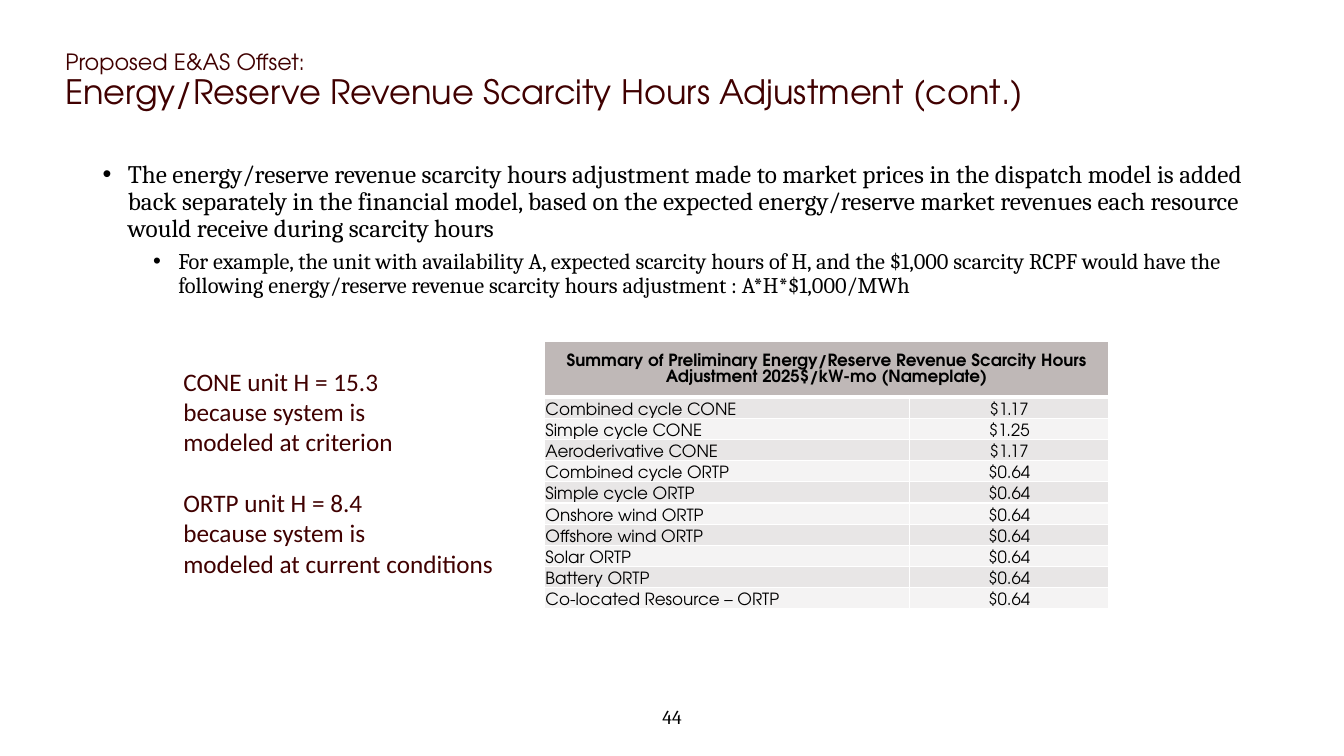
"""Build the slide on the scarcity hours adjustment with its summary table."""
import pptx
import pptx.dml.color
import pptx.enum.text
import pptx.oxml
import pptx.oxml.ns
import pptx.util

ALIGN = pptx.enum.text.PP_ALIGN
ANCHOR = pptx.enum.text.MSO_ANCHOR
MAROON, BLACK, WHITE = "400000", "000000", "FFFFFF"
HEADING_FONT, BODY_FONT, NOTE_FONT = "TeX Gyre Adventor", "Cambria", "Calibri"


def colour(value):
    return pptx.dml.color.RGBColor.from_string(value)


def write(frame, text, font=BODY_FONT, size=18, ink=BLACK, bold=False,
          align=ALIGN.LEFT, spacing=1.0, before=0, bullet_at=None):
    paragraph = frame.paragraphs[0]
    if paragraph.runs:
        paragraph = frame.add_paragraph()
    if bullet_at is not None:
        hang = pptx.util.Inches(0.25)
        properties = paragraph._p.get_or_add_pPr()
        properties.set("marL", str(pptx.util.Inches(bullet_at) + hang))
        properties.set("indent", str(-hang))
        properties.append(pptx.oxml.parse_xml(
            f'<a:buFont {pptx.oxml.ns.nsdecls("a")} typeface="Arial"/>'))
        properties.append(pptx.oxml.parse_xml(
            f'<a:buChar {pptx.oxml.ns.nsdecls("a")} char="•"/>'))
    paragraph.alignment = align
    paragraph.line_spacing = spacing
    paragraph.space_before = pptx.util.Pt(before)
    run = paragraph.add_run()
    run.text = text
    run.font.name = font
    run.font.size = pptx.util.Pt(size)
    run.font.bold = bold
    run.font.color.rgb = colour(ink)


deck = pptx.Presentation()
deck.slide_width = pptx.util.Inches(13.33)
deck.slide_height = pptx.util.Inches(7.5)
column, row = deck.slide_width / 100, deck.slide_height / 100
slide = deck.slides.add_slide(deck.slide_layouts[6])

title = dict(font=HEADING_FONT, ink=MAROON, spacing=0.9)
body = dict(spacing=0.9)
note = dict(font=NOTE_FONT, ink=MAROON)
text_blocks = [
    ((40.06, 92.93, 19.88, 5.73), ANCHOR.TOP, [
        ("44", dict(body, size=14, align=ALIGN.CENTER))]),
    ((4.13, 3.47, 86.27, 14.53), ANCHOR.MIDDLE, [
        ("Proposed E&AS Offset:", dict(title, size=16)),
        ("Energy/Reserve Revenue Scarcity Hours Adjustment (cont.)", dict(title, size=24))]),
    ((6.9, 20.67, 86.27, 27.07), ANCHOR.TOP, [
        ("The energy/reserve revenue scarcity hours adjustment made to market prices in the "
         "dispatch model is added back separately in the financial model, based on the expected "
         "energy/reserve market revenues each resource would receive during scarcity hours",
         dict(body, bullet_at=0)),
        ("For example, the unit with availability A, expected scarcity hours of H, and the $1,000 "
         "scarcity RCPF would have the following energy/reserve revenue scarcity hours "
         "adjustment : A*H*$1,000/MWh",
         dict(body, size=16, before=5, bullet_at=0.5))]),
    ((12.9, 47.73, 25.58, 29.6), ANCHOR.TOP, [
        ("CONE unit H = 15.3", note),
        ("because system is", note),
        ("modeled at criterion", note),
        ("ORTP unit H = 8.4", dict(note, before=22)),
        ("because system is", note),
        ("modeled at current conditions", note)]),
]
for (left, top, width, height), anchor, paragraphs in text_blocks:
    frame = slide.shapes.add_textbox(
        int(left * column), int(top * row), int(width * column), int(height * row)).text_frame
    frame.word_wrap = True
    frame.vertical_anchor = anchor
    for text, style in paragraphs:
        write(frame, text, **style)

adjustments = [
    ("Summary of Preliminary Energy/Reserve Revenue Scarcity Hours "
     "Adjustment 2025$/kW-mo (Nameplate)", ""),
    ("Combined cycle CONE", "$1.17"),
    ("Simple cycle CONE", "$1.25"),
    ("Aeroderivative CONE", "$1.17"),
    ("Combined cycle ORTP", "$0.64"),
    ("Simple cycle ORTP", "$0.64"),
    ("Onshore wind ORTP", "$0.64"),
    ("Offshore wind ORTP", "$0.64"),
    ("Solar ORTP", "$0.64"),
    ("Battery ORTP", "$0.64"),
    ("Co-located Resource – ORTP", "$0.64"),
]
summary = slide.shapes.add_table(
    len(adjustments), 2, int(40.51 * column), int(45.2 * row),
    int(42 * column), int(34.8 * row)).table
for summary_column, share in zip(summary.columns, (27.16, 14.85)):
    summary_column.width = int(share * column)
row_shares = [7.33, 2.67, 2.27] + [2.67] * 8
for index, (entries, share) in enumerate(zip(adjustments, row_shares)):
    summary.rows[index].height = int(share * row)
    heading = index == 0
    shade = "BFB8B7" if heading else ("F4F3F3", "E8E6E6")[index % 2]
    for position, entry in enumerate(entries):
        cell = summary.cell(index, position)
        cell.margin_left = cell.margin_right = cell.margin_top = pptx.util.Inches(0.01)
        cell.margin_bottom = 0
        cell.vertical_anchor = ANCHOR.MIDDLE if heading else ANCHOR.BOTTOM
        for edge, rule_row in (("lnL", None), ("lnR", None), ("lnT", 1), ("lnB", 0)):
            weight = pptx.util.Pt(3 if index == rule_row else 1)
            cell._tc.get_or_add_tcPr().append(pptx.oxml.parse_xml(
                f'<a:{edge} {pptx.oxml.ns.nsdecls("a")} w="{weight}"><a:solidFill>'
                f'<a:srgbClr val="{WHITE}"/></a:solidFill></a:{edge}>'))
        cell.fill.solid()
        cell.fill.fore_color.rgb = colour(shade)
        if entry:
            write(cell.text_frame, entry, font=HEADING_FONT, size=12, bold=heading,
                  align=ALIGN.CENTER if heading or position else ALIGN.LEFT)
summary.cell(0, 0).merge(summary.cell(0, 1))

deck.save("out.pptx")
